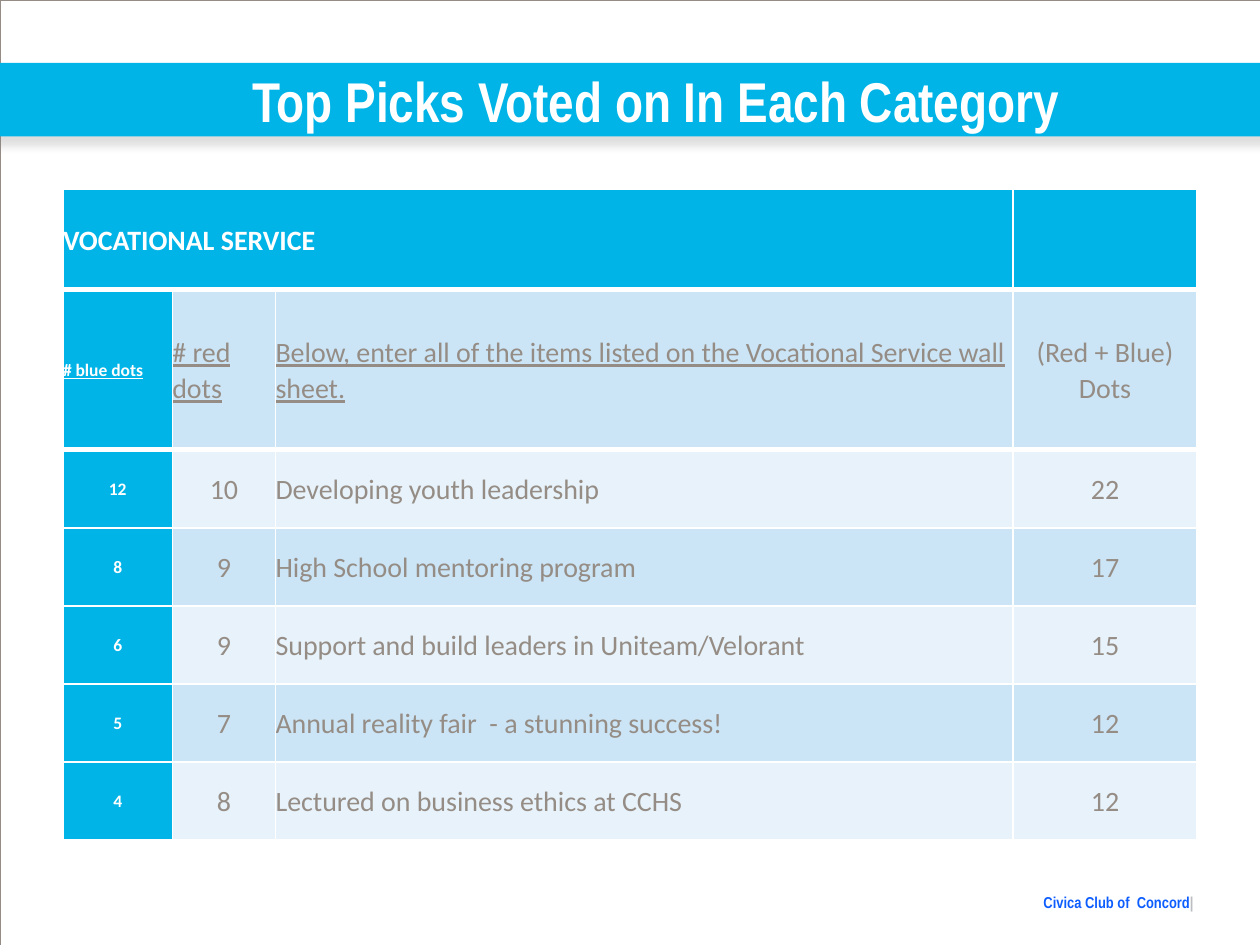
from pptx import Presentation
from pptx.dml.color import RGBColor
from pptx.enum.shapes import MSO_SHAPE
from pptx.enum.text import MSO_ANCHOR, PP_ALIGN
from pptx.oxml import parse_xml
from pptx.oxml.ns import nsdecls
from pptx.util import Pt

RECT = MSO_SHAPE.RECTANGLE
MIDDLE, TOP = MSO_ANCHOR.MIDDLE, MSO_ANCHOR.TOP
LEFT, CENTER, RIGHT = PP_ALIGN.LEFT, PP_ALIGN.CENTER, PP_ALIGN.RIGHT

WHITE = RGBColor(0xFF, 0xFF, 0xFF)
CYAN = RGBColor(0x01, 0xB4, 0xE7)
GRAY = RGBColor(0x95, 0x8D, 0x85)
BLUE = RGBColor(0x0E, 0x5E, 0xFF)
SILVER = RGBColor(0xBC, 0xBD, 0xC0)
BANDS = RGBColor(0xE7, 0xF2, 0xFA), RGBColor(0xCB, 0xE5, 0xF6)

HEADS = ["# blue dots", "# red dots",
         "Below, enter all of the items listed on the Vocational Service wall sheet.",
         "(Red + Blue) Dots"]
PICKS = [
    (12, 10, "Developing youth leadership"),
    (8, 9, "High School mentoring program"),
    (6, 9, "Support and build leaders in Uniteam/Velorant"),
    (5, 7, "Annual reality fair  - a stunning success!"),
    (4, 8, "Lectured on business ethics at CCHS"),
]
COLS = [62.5, 59, 421.5, 105]
ROWS = [57.6, 91.4] + [44.6] * len(PICKS)


def write(para, text, size=16, color=GRAY, bold=False, line=False,
          face="Calibri", align=LEFT):
    para.alignment = align
    run = para.add_run()
    run.text = text
    font = run.font
    font.name, font.size, font.bold, font.underline = face, Pt(size), bold, line
    font.color.rgb = color


class Deck:
    """Holds the style and the current slide."""

    def __init__(self, wide, high):
        self.show = Presentation()
        self.show.slide_width, self.show.slide_height = Pt(wide), Pt(high)
        self.slide = self.show.slides.add_slide(self.show.slide_layouts[6])
        self.face = "Arial Narrow"

    def rect(self, x, y, w, h, fill=None, edge=None, shade=False):
        shape = self.slide.shapes.add_shape(RECT, Pt(x), Pt(y), Pt(w), Pt(h))
        shape.shadow.inherit = False
        if fill is None:
            shape.fill.background()
        else:
            shape.fill.solid()
            shape.fill.fore_color.rgb = fill
        if edge is None:
            shape.line.fill.background()
        else:
            shape.line.color.rgb = edge
            shape.line.width = Pt(0.25)
        if shade:
            glow = shape._element.spPr.find("{*}effectLst")
            glow.append(parse_xml(
                f'<a:outerShdw {nsdecls("a")} blurRad="{Pt(5)}" dist="{Pt(4.8)}" '
                'dir="5400000" rotWithShape="0"><a:srgbClr val="808080">'
                '<a:alpha val="25000"/></a:srgbClr></a:outerShdw>'))

    def text(self, x, y, w, h, runs, anchor=TOP, **style):
        frame = self.slide.shapes.add_textbox(Pt(x), Pt(y), Pt(w), Pt(h)).text_frame
        frame.word_wrap = True
        frame.vertical_anchor = anchor
        frame.margin_left = frame.margin_right = 0
        frame.margin_top = frame.margin_bottom = 0
        for words, color in runs:
            write(frame.paragraphs[0], words, color=color, bold=True,
                  face=self.face, **style)

    def table(self, x, y, cols, rows):
        grid = self.slide.shapes.add_table(
            len(rows), len(cols), Pt(x), Pt(y), Pt(sum(cols)), Pt(sum(rows))).table
        for col, wide in zip(grid.columns, cols):
            col.width = Pt(wide)
        for row, high in zip(grid.rows, rows):
            row.height = Pt(high)
        return grid

    def cell(self, cell, text, fill, top, base, **style):
        cell.margin_left = cell.margin_right = 0
        cell.margin_top = cell.margin_bottom = 0
        cell.vertical_anchor = MIDDLE
        props = cell._tc.get_or_add_tcPr()
        for side, width in zip("LRTB", (1, 1, top, base)):
            props.append(parse_xml(
                f'<a:ln{side} {nsdecls("a")} w="{Pt(width)}"><a:solidFill>'
                f'<a:srgbClr val="{WHITE}"/></a:solidFill></a:ln{side}>'))
        cell.fill.solid()
        cell.fill.fore_color.rgb = fill
        if text:
            para = cell.text_frame.paragraphs[0]
            para.line_spacing = 1.07
            write(para, text, **style)


def main():
    deck = Deck(720, 540)
    deck.text(558, 510, 126, 10,
              [("Civica Club of  Concord", BLUE), ("| ", SILVER)],
              size=9, align=RIGHT)
    deck.rect(0, 0, 720, 540, edge=GRAY)
    deck.rect(-6, 36, 732, 42, fill=CYAN, shade=True)
    deck.text(30, 36, 690, 42, [("Top Picks Voted on In Each Category", WHITE)],
              anchor=MIDDLE, size=32, align=CENTER)

    grid = deck.table(36, 108, COLS, ROWS)
    grid.cell(0, 0).merge(grid.cell(0, 2))
    lines = [["VOCATIONAL SERVICE", "", "", ""], HEADS]
    lines += [[str(blue), str(red), item, str(blue + red)]
              for blue, red, item in PICKS]
    for r, line in enumerate(lines):
        for c, text in enumerate(line):
            strong = r == 0 or c == 0
            middle = c == 3 or (r > 1 and c != 2)
            deck.cell(grid.cell(r, c), text,
                      fill=CYAN if strong else BANDS[r % 2],
                      top=3 if r in (1, 2) else 1, base=3 if r < 2 else 1,
                      size=10 if r and c == 0 else 16,
                      color=WHITE if strong else GRAY, bold=strong,
                      line=r == 1 and c < 3, align=CENTER if middle else LEFT)
    deck.show.save("out.pptx")


if __name__ == "__main__":
    main()
